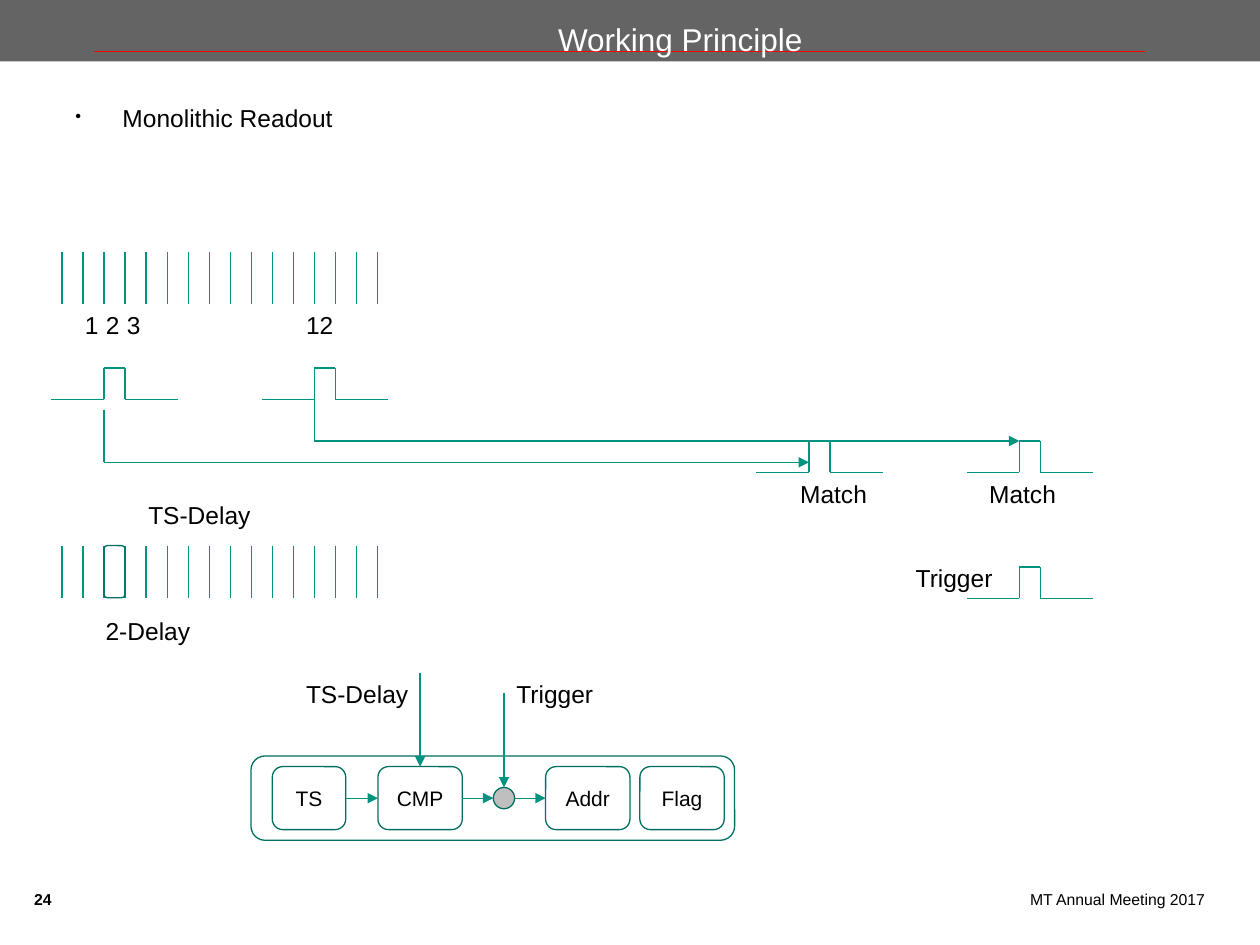
from dataclasses import dataclass
from itertools import pairwise

from lxml import etree
from pptx import Presentation
from pptx.dml.color import RGBColor
from pptx.enum.shapes import MSO_CONNECTOR, MSO_SHAPE
from pptx.enum.text import MSO_ANCHOR, PP_ALIGN
from pptx.oxml.ns import qn
from pptx.util import Cm, Pt

STRAIGHT = MSO_CONNECTOR.STRAIGHT
RECTANGLE, ROUNDED, OVAL = MSO_SHAPE.RECTANGLE, MSO_SHAPE.ROUNDED_RECTANGLE, MSO_SHAPE.OVAL
LEFT, CENTER, RIGHT = PP_ALIGN.LEFT, PP_ALIGN.CENTER, PP_ALIGN.RIGHT
TOP, MIDDLE = MSO_ANCHOR.TOP, MSO_ANCHOR.MIDDLE
TOP_SIDE, LEFT_SIDE, RIGHT_SIDE = 0, 1, 3


@dataclass(frozen=True)
class Theme:
    font: str = "Arial"
    ink: str = "000000"
    paper: str = "FFFFFF"
    band: str = "646464"
    rule: str = "FF0000"
    signal: str = "00937F"
    outline: str = "006F60"
    node: str = "BFBFBF"
    title: int = 18
    body: int = 14
    cell: int = 12
    footer: int = 9
    thin: float = 0.75


@dataclass(frozen=True)
class Box:
    left: float
    top: float
    width: float
    height: float

    def inner(self, left, top, width, height):
        return Box(self.left + left, self.top + top, width, height)

    def lengths(self):
        return Cm(self.left), Cm(self.top), Cm(self.width), Cm(self.height)


THEME = Theme()
SLOTS = 15
SLOT = 0.424
TICK_HEIGHT = 1.05
PULSE_HEIGHT = 0.63
WING = 1.06
LABEL_HEIGHT = 0.86


def write(shape, text, *, size=THEME.body, color=THEME.ink, align=LEFT,
          anchor=TOP, bold=False, wrap=True, inset=True, bullet=None):
    frame = shape.text_frame
    frame.word_wrap = wrap
    frame.vertical_anchor = anchor
    if not inset:
        frame.margin_left = frame.margin_top = frame.margin_right = frame.margin_bottom = 0
    paragraph = frame.paragraphs[0]
    paragraph.alignment = align
    if bullet:
        properties = paragraph._p.get_or_add_pPr()
        properties.set("marL", str(Cm(0.95)))
        properties.set("indent", str(-Cm(0.95)))
        etree.SubElement(properties, qn("a:buSzPct"), val="70000")
        etree.SubElement(properties, qn("a:buChar"), char=bullet)
    run = paragraph.add_run()
    run.text = text
    run.font.name = THEME.font
    run.font.size = Pt(size)
    run.font.bold = bold
    run.font.color.rgb = RGBColor.from_string(color)


def add_text(slide, box, text, **style):
    write(slide.shapes.add_textbox(*box.lengths()), text, **style)


def add_label(slide, region, left, top, width, text):
    add_text(slide, region.inner(left, top, width, LABEL_HEIGHT), text, wrap=False)


def add_outline(slide, kind, box, fill=None, line=THEME.outline):
    shape = slide.shapes.add_shape(kind, *box.lengths())
    shape.shadow.inherit = False
    if fill:
        shape.fill.solid()
        shape.fill.fore_color.rgb = RGBColor.from_string(fill)
    else:
        shape.fill.background()
    if line:
        shape.line.color.rgb = RGBColor.from_string(line)
        shape.line.width = Pt(THEME.thin)
    else:
        shape.line.fill.background()
    return shape


def add_line(slide, region, start, end, color=THEME.signal, width=THEME.thin, arrow=False):
    points = [Cm(origin + offset) for point in (start, end)
              for origin, offset in zip((region.left, region.top), point)]
    connector = slide.shapes.add_connector(STRAIGHT, *points)
    connector.line.color.rgb = RGBColor.from_string(color)
    connector.line.width = Pt(width)
    if arrow:
        etree.SubElement(connector.get_or_add_ln(), qn("a:tailEnd"), type="triangle")
    etree.SubElement(connector._element.spPr, qn("a:effectLst"))
    return connector


def add_header(slide, box):
    add_outline(slide, RECTANGLE, box, fill=THEME.band, line=None)
    add_line(slide, box, (23.09, 1.04), (1.9, 1.04), color=THEME.rule, width=1)
    add_text(slide, box.inner(3.3, 0.3, 20.83, 0.97), "Working Principle",
             size=THEME.title, color=THEME.paper, align=CENTER, anchor=MIDDLE)


def add_footer(slide, box):
    add_text(slide, box.inner(0, 0, 0.91, 0.61), "24",
             size=THEME.footer, bold=True, inset=False)
    add_text(slide, box.inner(box.width - 7.6, 0, 7.6, box.height),
             "MT Annual Meeting 2017", size=THEME.footer, align=RIGHT, inset=False)


def add_clock(slide, box):
    for tick in range(SLOTS + 1):
        add_line(slide, box, (tick * SLOT, 0), (tick * SLOT, box.height))


def add_pulse(slide, region, rise, top):
    fall, base = rise + SLOT, top + PULSE_HEIGHT
    corners = [(rise - WING, base), (rise, base), (rise, top),
               (fall, top), (fall, base), (fall + WING, base)]
    for start, end in pairwise(corners):
        add_line(slide, region, start, end)


def add_timing(slide, box):
    first_hit, second_hit = 2 * SLOT, 12 * SLOT
    first_match, second_match = 15.06, 19.3
    hit_top, match_top, trigger_top, delayed_top = 2.34, 3.81, 6.35, 5.92

    for top in (0, delayed_top):
        add_clock(slide, box.inner(0, top, SLOTS * SLOT, TICK_HEIGHT))
    add_outline(slide, ROUNDED, box.inner(first_hit, delayed_top, SLOT, TICK_HEIGHT))

    for rise, top in ((first_hit, hit_top), (second_hit, hit_top),
                      (first_match, match_top), (second_match, match_top),
                      (second_match, trigger_top)):
        add_pulse(slide, box, rise, top)

    for hit, match, start, level in ((first_hit, first_match, 3.18, 4.24),
                                     (second_hit, second_match, 2.74, match_top)):
        add_line(slide, box, (hit, start), (hit, level))
        add_line(slide, box, (hit, level), (match, level), arrow=True)

    for slot in (1, 2, 3):
        add_label(slide, box, (slot - 0.5) * SLOT, TICK_HEIGHT, 0.79, str(slot))
    for left, top, width, text in ((4.67, TICK_HEIGHT, 1.07, "12"),
                                   (14.63, 4.45, 1.85, "Match"),
                                   (18.44, 4.45, 1.85, "Match"),
                                   (16.96, 6.15, 2.06, "Trigger"),
                                   (1.49, 4.88, 2.59, "TS-Delay"),
                                   (0.63, 7.21, 2.24, "2-Delay")):
        add_label(slide, box, left, top, width, text)


def add_pixel_logic(slide, box):
    register_top, register_height = 1.68, 1.7
    cell_height, gate_size, gate_center = 1.27, 0.43, 5.1
    middle = register_top + register_height / 2
    gate_left, gate_right = gate_center - gate_size / 2, gate_center + gate_size / 2
    gate_top = middle - gate_size / 2

    add_outline(slide, ROUNDED, box.inner(0, register_top, box.width, register_height))
    cells = {}
    for text, left, width in (("TS", 0.43, 1.48), ("CMP", 2.56, 1.7),
                              ("Addr", 5.94, 1.7), ("Flag", 7.84, 1.7)):
        cells[text] = add_outline(
            slide, ROUNDED, box.inner(left, middle - cell_height / 2, width, cell_height))
        write(cells[text], text, size=THEME.cell, align=CENTER, anchor=MIDDLE, wrap=False)
    gate = add_outline(slide, OVAL, box.inner(gate_left, gate_top, gate_size, gate_size),
                       fill=THEME.node)

    compare = add_line(slide, box, (1.91, middle), (2.56, middle), arrow=True)
    compare.begin_connect(cells["TS"], RIGHT_SIDE)
    compare.end_connect(cells["CMP"], LEFT_SIDE)
    matched = add_line(slide, box, (4.26, middle), (gate_left, middle), arrow=True)
    matched.begin_connect(cells["CMP"], RIGHT_SIDE)
    accepted = add_line(slide, box, (gate_right, middle), (5.94, middle), arrow=True)
    accepted.end_connect(cells["Addr"], LEFT_SIDE)
    delay = add_line(slide, box, (3.41, 0), (3.41, middle - cell_height / 2), arrow=True)
    delay.end_connect(cells["CMP"], TOP_SIDE)
    trigger = add_line(slide, box, (gate_center, 0.41), (gate_center, gate_top), arrow=True)
    trigger.end_connect(gate, TOP_SIDE)

    add_label(slide, box, 0.86, 0, 2.59, "TS-Delay")
    add_label(slide, box, gate_center, 0, 2.06, "Trigger")


def main():
    deck = Presentation()
    deck.slide_width, deck.slide_height = Cm(25.4), Cm(19.05)
    slide = deck.slides.add_slide(deck.slide_layouts[6])
    add_header(slide, Box(0, 0, 25.4, 1.24))
    add_text(slide, Box(1.27, 1.96, 22.86, 1.04), "Monolithic Readout", bullet="•")
    add_timing(slide, Box(1.25, 5.08, 20.8, 8.07))
    add_pixel_logic(slide, Box(5.06, 13.56, 9.75, 3.38))
    add_footer(slide, Box(0.69, 17.93, 23.6, 0.99))
    deck.save("out.pptx")


if __name__ == "__main__":
    main()
